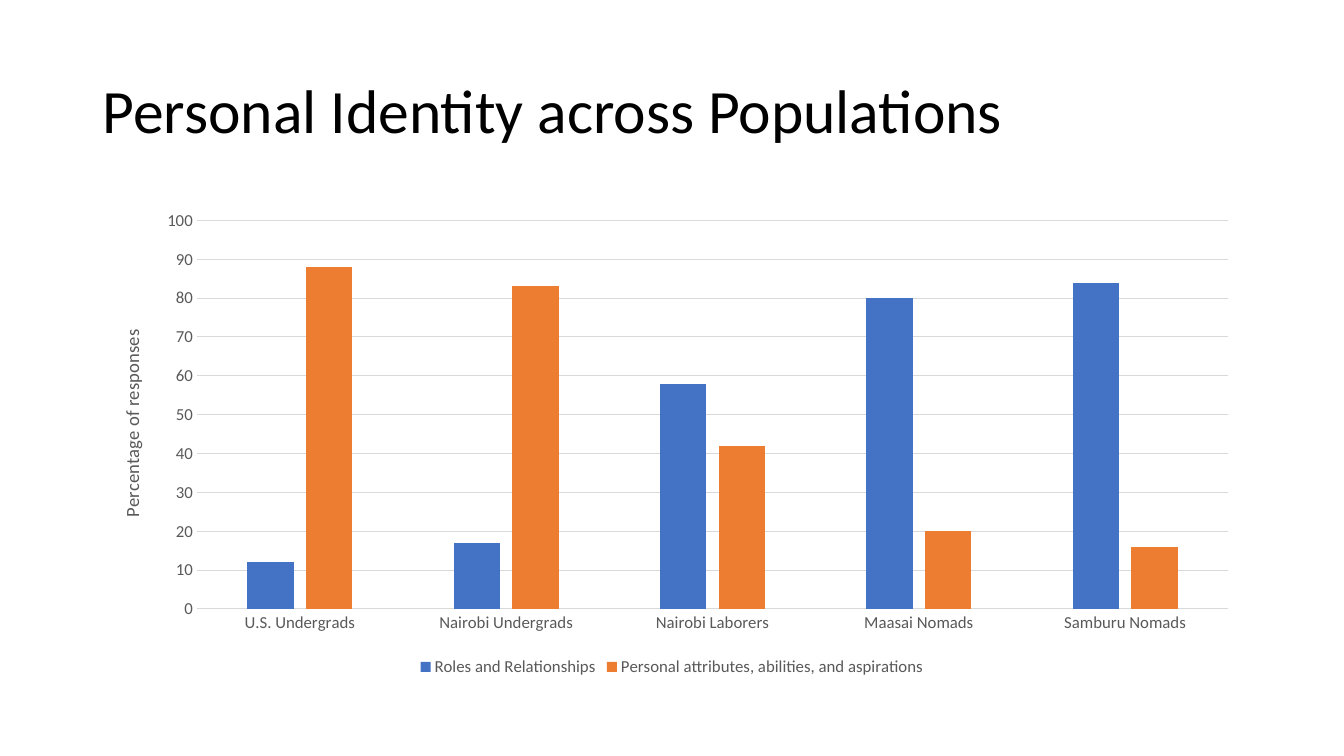
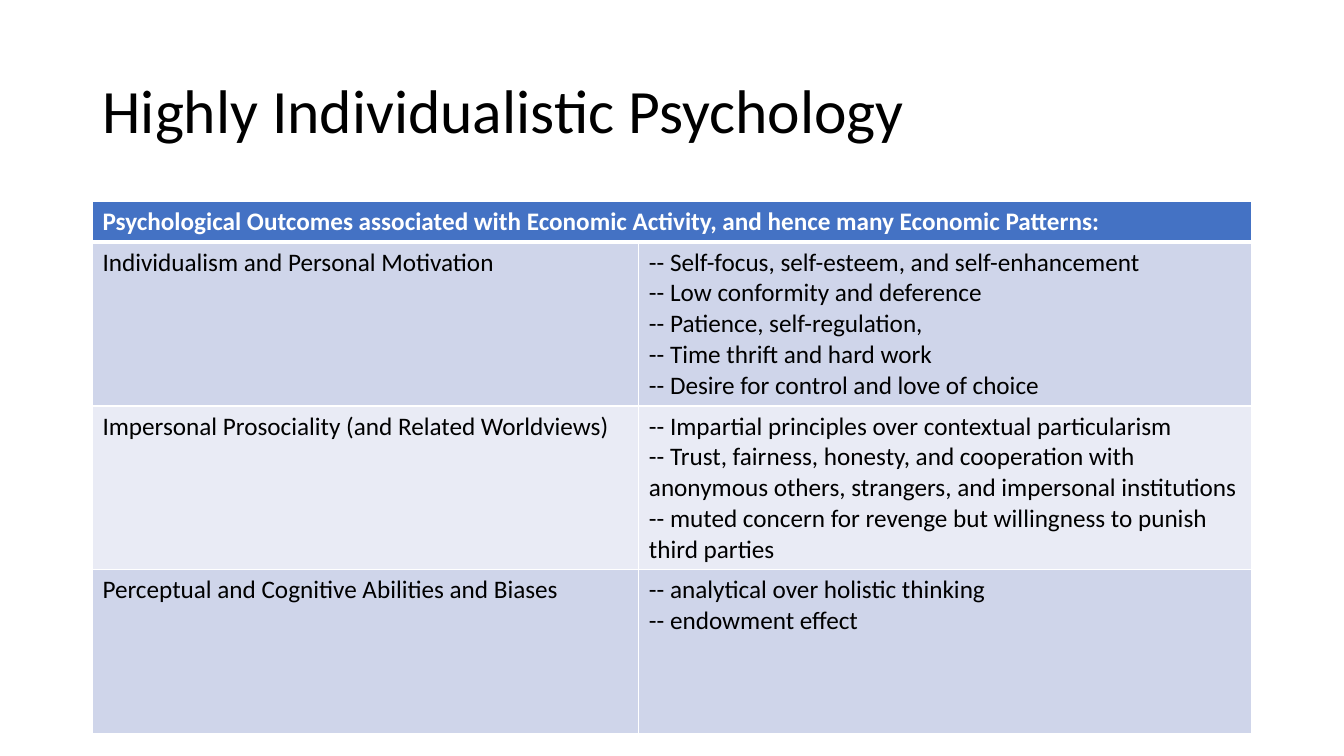
from lxml.etree import SubElement
from pptx import Presentation
from pptx.chart.data import CategoryChartData
from pptx.dml.color import RGBColor
from pptx.enum.chart import XL_CHART_TYPE, XL_LEGEND_POSITION, XL_TICK_MARK
from pptx.enum.text import MSO_ANCHOR, MSO_AUTO_SIZE, PP_ALIGN
from pptx.oxml.ns import qn
from pptx.util import Cm, Pt

# Shared look
FONT = "Calibri"
BLACK, WHITE, GRAY, RULE = "000000", "FFFFFF", "595959", "D9D9D9"
BLUE, ORANGE = "4472C4", "ED7D31"
BANDS = ("CFD5EA", "E9EBF5")
LEFT, WIDTH = Cm(2.33), Cm(29.21)
TITLE_TOP, TITLE_HEIGHT = Cm(1.01), Cm(3.68)
CONTENT_TOP = Cm(5.07)

# Content
POPULATIONS = ("U.S. Undergrads", "Nairobi Undergrads", "Nairobi Laborers",
               "Maasai Nomads", "Samburu Nomads")
RESPONSES = (
    ("Roles and Relationships", (12, 17, 58, 80, 84), BLUE),
    ("Personal attributes, abilities, and aspirations",
     (88, 83, 42, 20, 16), ORANGE),
)
OUTCOMES_HEADING = ("Psychological Outcomes associated with Economic Activity, "
                    "and hence many Economic Patterns:")
OUTCOMES = (
    ("Individualism and Personal Motivation", (
        "-- Self-focus, self-esteem, and self-enhancement",
        "-- Low conformity and deference",
        "-- Patience, self-regulation,",
        "-- Time thrift and hard work",
        "-- Desire for control and love of choice")),
    ("Impersonal Prosociality (and Related Worldviews)", (
        "-- Impartial principles over contextual particularism",
        "-- Trust, fairness, honesty, and cooperation with anonymous others, "
        "strangers, and impersonal institutions",
        "-- muted concern for revenge but willingness to punish third parties")),
    ("Perceptual and Cognitive Abilities and Biases", (
        "-- analytical over holistic thinking",
        "-- endowment effect")),
)


def rgb(value):
    return RGBColor.from_string(value)


def style_font(font, size, color, bold=False):
    font.name = FONT
    font.size = Pt(size)
    font.bold = bold
    font.color.rgb = rgb(color)


def write(frame, text, size, color, bold=False):
    frame.text = text
    for paragraph in frame.paragraphs:
        for run in paragraph.runs:
            style_font(run.font, size, color, bold)


def add_titled_slide(prs, text):
    slide = prs.slides.add_slide(prs.slide_layouts[5])
    title = slide.shapes.title
    title.left, title.top = LEFT, TITLE_TOP
    title.width, title.height = WIDTH, TITLE_HEIGHT
    frame = title.text_frame
    write(frame, text, 44, BLACK)
    frame.word_wrap = True
    frame.auto_size = MSO_AUTO_SIZE.NONE
    frame.vertical_anchor = MSO_ANCHOR.MIDDLE
    frame.paragraphs[0].alignment = PP_ALIGN.LEFT
    frame.paragraphs[0].line_spacing = 0.9
    return slide


# Chart
def place_in_chart(element, index, **settings):
    """Give a chart part a manual layout in fractions of the chart."""
    for old in element.findall(qn("c:layout")):
        element.remove(old)
    layout = SubElement(element, qn("c:layout"))
    element.insert(index, layout)
    manual = SubElement(layout, qn("c:manualLayout"))
    for tag, value in settings.items():
        SubElement(manual, qn(f"c:{tag}")).set("val", str(value))


def style_axis(axis):
    style_font(axis.tick_labels.font, 12, GRAY)
    axis.major_tick_mark = axis.minor_tick_mark = XL_TICK_MARK.NONE


def style_rule(line):
    line.color.rgb = rgb(RULE)
    line.width = Pt(0.75)


def format_value_axis(axis):
    style_axis(axis)
    axis.minimum_scale, axis.maximum_scale, axis.major_unit = 0, 100, 10
    axis.format.line.fill.background()
    style_rule(axis.major_gridlines.format.line)
    caption = axis.axis_title
    write(caption.text_frame, "Percentage of responses", 13.3, GRAY)
    body = caption.format and caption.text_frame._txBody.find(qn("a:bodyPr"))
    body.set("rot", "-5400000")
    body.set("vert", "horz")
    place_in_chart(caption._element, 1, xMode="edge", yMode="edge",
                   x=0.02, y=0.26)


def add_response_chart(slide):
    data = CategoryChartData()
    data.categories = POPULATIONS
    for name, values, _ in RESPONSES:
        data.add_series(name, values)
    chart = slide.shapes.add_chart(XL_CHART_TYPE.COLUMN_CLUSTERED, LEFT,
                                   CONTENT_TOP, WIDTH, Cm(12.09), data).chart
    style_font(chart.font, 10, BLACK)
    chart.has_title = False
    chart.has_legend = True
    chart.legend.position = XL_LEGEND_POSITION.BOTTOM
    chart.legend.include_in_layout = False
    style_font(chart.legend.font, 12, GRAY)

    columns = chart.plots[0]
    columns.gap_width, columns.overlap = 219, -27
    columns.vary_by_categories = False
    for series, (_, _, color) in zip(columns.series, RESPONSES):
        series.format.fill.solid()
        series.format.fill.fore_color.rgb = rgb(color)

    style_axis(chart.category_axis)
    style_rule(chart.category_axis.format.line)
    format_value_axis(chart.value_axis)
    plot_area = chart._chartSpace.find(f".//{qn('c:plotArea')}")
    place_in_chart(plot_area, 0, layoutTarget="inner", xMode="edge",
                   yMode="edge", x=0.09, y=0.04, w=0.89, h=0.81)


# Table
def format_cell(cell, text, fill, color=BLACK, bold=False, bottom=1):
    write(cell.text_frame, text, 18, color, bold)
    properties = cell._tc.get_or_add_tcPr()
    for side, points in (("L", 1), ("R", 1), ("T", 1), ("B", bottom)):
        border = SubElement(properties, qn(f"a:ln{side}"), w=str(Pt(points)))
        paint = SubElement(border, qn("a:solidFill"))
        SubElement(paint, qn("a:srgbClr"), val=WHITE)
    cell.fill.solid()
    cell.fill.fore_color.rgb = rgb(fill)


def add_outcome_table(slide):
    header_height, row_height = Cm(1.03), Cm(4.13)
    table = slide.shapes.add_table(
        len(OUTCOMES) + 1, 2, LEFT, CONTENT_TOP, WIDTH,
        header_height + len(OUTCOMES) * row_height).table
    table.columns[0].width = Cm(13.77)
    table.columns[1].width = WIDTH - Cm(13.77)
    table.rows[0].height = header_height

    heading = table.cell(0, 0)
    heading.merge(table.cell(0, 1))
    format_cell(heading, OUTCOMES_HEADING, BLUE, WHITE, bold=True, bottom=3)
    for index, (topic, examples) in enumerate(OUTCOMES):
        table.rows[index + 1].height = row_height
        band = BANDS[index % 2]
        for column, text in enumerate((topic, "\n".join(examples))):
            format_cell(table.cell(index + 1, column), text, band,
                        bottom=1)


def main():
    prs = Presentation()
    prs.slide_width, prs.slide_height = Cm(33.87), Cm(19.05)
    add_response_chart(
        add_titled_slide(prs, "Personal Identity across Populations"))
    add_outcome_table(
        add_titled_slide(prs, "Highly Individualistic Psychology"))
    prs.save("out.pptx")


if __name__ == "__main__":
    main()
